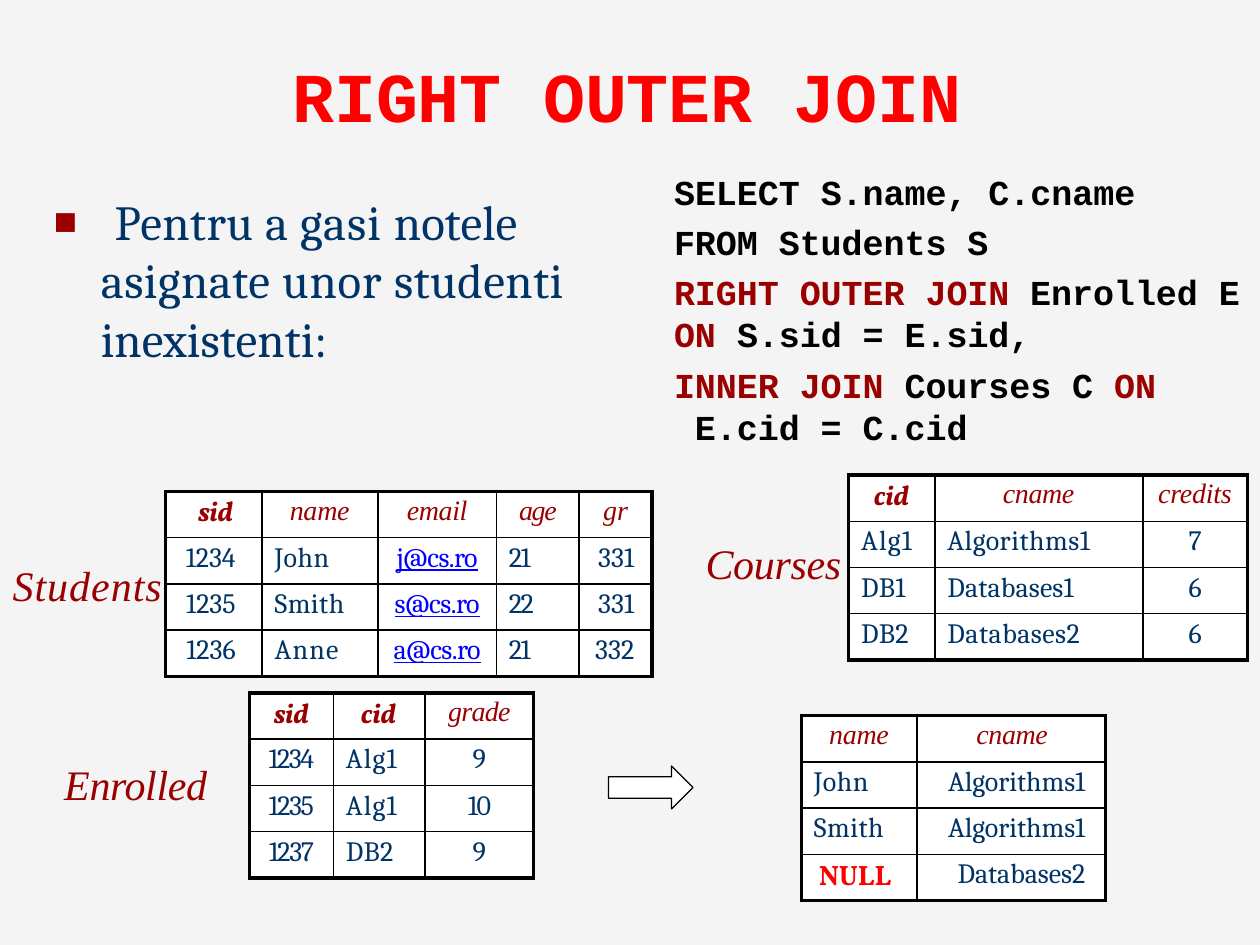
"""Build the RIGHT OUTER JOIN slide: a query, its three source tables and the result."""
from dataclasses import dataclass

from lxml import etree
from pptx import Presentation
from pptx.dml.color import RGBColor
from pptx.enum import shapes, text
from pptx.oxml import ns
from pptx.util import Pt


@dataclass(frozen=True)
class Theme:
    paper: str = "EAEAEA"
    paper_alpha: int = 50000
    white: str = "FFFFFF"
    ink: str = "000000"
    alert: str = "FF0000"
    accent: str = "9A0000"
    body: str = "003366"
    link: str = "0000FF"
    code_font: str = "Courier New"
    body_font: str = "Cambria"
    label_font: str = "Times New Roman"
    key_font: str = "Vollkorn"
    title_size: int = 40
    body_size: int = 28
    label_size: int = 24
    code_size: int = 20
    cell_size: int = 16
    code_tracking: float = -0.05
    outer_line: float = 2.25
    inner_line: float = 1


theme = Theme()
deck = Presentation()
deck.slide_width, deck.slide_height = Pt(720), Pt(540)
page = deck.slides.add_slide(deck.slide_layouts[6])
UNIT = deck.slide_width / 100
LEFT, CENTER, RIGHT = text.PP_ALIGN.LEFT, text.PP_ALIGN.CENTER, text.PP_ALIGN.RIGHT

backdrop = page.shapes.add_shape(shapes.MSO_SHAPE.RECTANGLE, 0, 0,
                                 deck.slide_width, deck.slide_height)
backdrop.shadow.inherit = False
backdrop.fill.solid()
backdrop.fill.fore_color.rgb = RGBColor.from_string(theme.paper)
backdrop.line.fill.background()
paper_color = backdrop._element.spPr.find(ns.qn("a:solidFill"))[0]
etree.SubElement(paper_color, ns.qn("a:alpha")).set("val", str(theme.paper_alpha))


def write(para, spans, font, size, before, bold=False, italic=False):
    """Fill a paragraph with (words, colour, tracking) spans."""
    para.font.name, para.font.size = font, Pt(size)
    para.font.bold, para.font.italic = bold, italic
    para.space_before = Pt(before)
    for words, color, tracking in spans:
        if words == "\n":
            para.add_line_break()
            continue
        span = para.add_run()
        span.text = words
        span.font.color.rgb = RGBColor.from_string(color)
        span.font.underline = color == theme.link
        span.font._element.set("spc", str(round(tracking * 100)))


def add_box(place, top_margin=0.1):
    """Add a wrapping text box placed in grid units and return its frame."""
    frame = page.shapes.add_textbox(*(round(n * UNIT) for n in place)).text_frame
    frame.word_wrap = True
    frame.margin_left = round(0.1 * UNIT)
    frame.margin_right = frame.margin_bottom = 0
    frame.margin_top = round(top_margin * UNIT)
    return frame


title = add_box((22.9, 4, 53.6, 6.9))
title.vertical_anchor = text.MSO_ANCHOR.MIDDLE
title.paragraphs[0].alignment = CENTER
write(title.paragraphs[0], [("RIGHT OUTER JOIN", theme.alert, -0.1)],
      theme.code_font, theme.title_size, 0.9, bold=True)

bullet = add_box((4.2, 15.1, 38.8, 4.9)).paragraphs[0]
write(bullet, [("Pentru a ", theme.body, 0.3), ("gasi ", theme.body, 0.6),
               ("notele", theme.body, 0.1)], theme.body_font, theme.body_size, 0.9)
layout = bullet._p.get_or_add_pPr()
layout.set("marL", str(round(4.8 * UNIT)))
layout.set("indent", str(round(-4.8 * UNIT)))
marks = etree.fromstring(
    f'<a:marks xmlns:a="{ns.nsuri("a")}"><a:buClr><a:srgbClr val="{theme.accent}"/></a:buClr>'
    '<a:buSzPct val="75000"/><a:buFont typeface="Arial"/><a:buChar char="◼"/></a:marks>')
run_defaults = layout.find(ns.qn("a:defRPr"))
for mark in list(marks):
    run_defaults.addprevious(mark)

write(add_box((7.9, 19.7, 38.9, 9.6)).paragraphs[0],
      [("asignate ", theme.body, 0.3), ("unor ", theme.body, 0.5),
       ("studenti ", theme.body, 0.3), ("inexistenti:", theme.body, 0.1)],
      theme.body_font, theme.body_size, 0.9)

ink, accent = theme.ink, theme.accent
QUERY = [
    ((53.4, 13.4, 36.9, 3.6), 0.1, [(1.1, [("SELECT S.name, C.cname", ink)])]),
    ((53.4, 16.7, 45.3, 19), 0.8, [
        (5.8, [("FROM Students S", ink)]),
        (4.8, [("RIGHT OUTER JOIN ", accent), ("Enrolled E", ink)]),
        (0, [("ON ", accent), ("S.sid = E.sid,", ink)]),
        (4.8, [("INNER JOIN ", accent), ("Courses C ", ink), ("ON", accent),
               ("\n", ink), (" E.cid = C.cid", ink)]),
    ]),
]
for place, top_margin, lines in QUERY:
    frame = add_box(place, top_margin)
    for index, (before, spans) in enumerate(lines):
        para = frame.add_paragraph() if index else frame.paragraphs[0]
        write(para, [(*span, theme.code_tracking) for span in spans],
              theme.code_font, theme.code_size, before, bold=True)

LABELS = [("Students", (0.9, 44.3, 12.3, 4.3), 0.6),
          ("Enrolled", (5, 60.1, 11.8, 4.3), -0.2),
          ("Courses", (55.9, 42.6, 11, 4.3), -0.2)]
for label, place, tracking in LABELS:
    write(add_box(place).paragraphs[0], [(label, accent, tracking)],
          theme.label_font, theme.label_size, 1, italic=True)

ROW = 3.67
KEYS = {"sid", "cid"}
TRACKING = {"grade": -0.4, "email": -0.2, "age": -0.7, "gr": 0.1, "cname": -0.2,
            "DB1": 0.2, "DB2": 0.2, "10": -0.8, "Anne": 0.7, "Databases1": 0.1}
INSETS = {"NULL": 1.4}
# Each column: width, (header alignment, inset), (body alignment, inset), body tracking, words.
TABLES = [
    ((19.8, 55), [
        (6.65, (CENTER, 0), (CENTER, 0), -0.8, "sid 1234 1235 1237"),
        (7.3, (LEFT, 2.2), (LEFT, 1), 0.7, "cid Alg1 Alg1 DB2"),
        (8.6, (CENTER, 0), (CENTER, 0), 0, "grade 9 10 9")]),
    ((13.15, 39), [
        (7.65, (RIGHT, 2.3), (RIGHT, 2.1), 0, "sid 1234 1235 1236"),
        (9.2, (LEFT, 2.2), (LEFT, 1), 0.3, "name John Smith Anne"),
        (9.4, (CENTER, 0), (CENTER, 0), -0.3, "email j@cs.ro s@cs.ro a@cs.ro"),
        (6.55, (LEFT, 1.8), (LEFT, 1), -0.8, "age 21 22 21"),
        (5.8, (RIGHT, 1.9), (RIGHT, 1.4), 0.1, "gr 331 331 332")]),
    ((63.6, 56.8), [
        (9.2, (LEFT, 2.2), (LEFT, 1), 0.3, "name John Smith NULL"),
        (14.95, (LEFT, 4.7), (RIGHT, 1.6), 0, "cname Algorithms1 Algorithms1 Databases2")]),
    ((67.35, 37.7), [
        (6.85, (LEFT, 2), (LEFT, 1), 0.7, "cid Alg1 DB1 DB2"),
        (16.5, (LEFT, 5.4), (LEFT, 1), 0.3, "cname Algorithms1 Databases1 Databases2"),
        (8.3, (CENTER, 0), (CENTER, 0), 0, "credits 7 6 6")]),
]
for (left, top), columns in TABLES:
    width = sum(column[0] for column in columns)
    place = (round(n * UNIT) for n in (left, top, width, 4 * ROW))
    table = page.shapes.add_table(4, len(columns), *place).table
    table.first_row = table.horz_banding = False
    for c, (width, header, body, tracking, words) in enumerate(columns):
        table.columns[c].width = round(width * UNIT)
        for r, word in enumerate(words.split()):
            cell = table.cell(r, c)
            align, inset = body if r else header
            inset = INSETS.get(word, inset)
            cell.margin_left = round(inset * UNIT) if align == LEFT else 0
            cell.margin_right = round(inset * UNIT) if align == RIGHT else 0
            cell.margin_top, cell.margin_bottom = round((0.35 if r else 0.3) * UNIT), 0
            edges = {"lnL": c == 0, "lnR": c == len(columns) - 1, "lnT": r == 0, "lnB": r == 3}
            for edge, outer in edges.items():
                line = etree.SubElement(cell._tc.get_or_add_tcPr(), ns.qn(f"a:{edge}"))
                line.set("w", str(Pt(theme.outer_line if outer else theme.inner_line)))
                paint = etree.SubElement(line, ns.qn("a:solidFill"))
                etree.SubElement(paint, ns.qn("a:srgbClr")).set("val", ink)
            cell.fill.solid()
            cell.fill.fore_color.rgb = RGBColor.from_string(theme.white)
            if r == 0:
                font, color, spacing = theme.label_font, accent, TRACKING.get(word, -0.1)
            else:
                font, color, spacing = theme.body_font, theme.body, TRACKING.get(word, tracking)
            if "@" in word:
                color = theme.link
            if word == "NULL":
                color, spacing = theme.alert, -0.1
            strong = word in KEYS or word == "NULL"
            para = cell.text_frame.paragraphs[0]
            para.alignment = align
            write(para, [(word, color, spacing)], theme.key_font if strong else font,
                  theme.cell_size, 2.5 if r else 2.4, bold=strong, italic=r == 0)
    for row in table.rows:
        row.height = round(ROW * UNIT)

arrow = page.shapes.add_shape(shapes.MSO_SHAPE.RIGHT_ARROW,
                              *(round(n * UNIT) for n in (48.3, 60.8, 6.7, 3.4)))
arrow.shadow.inherit = False
arrow.fill.solid()
arrow.fill.fore_color.rgb = RGBColor.from_string(theme.white)
arrow.line.color.rgb = RGBColor.from_string(ink)
arrow.line.width = Pt(0.72)

deck.save("out.pptx")
